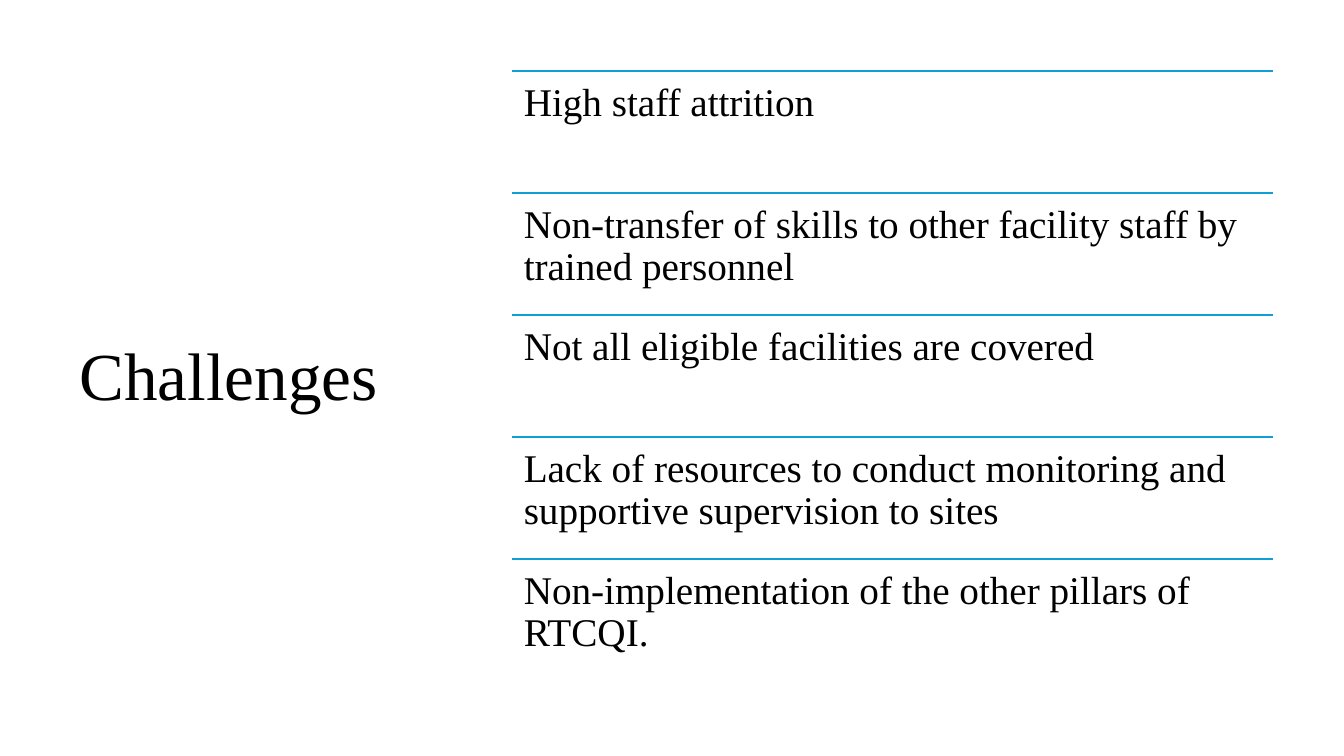
import pptx
import pptx.dml.color
import pptx.enum.shapes
import pptx.enum.text
import pptx.oxml.ns
import pptx.util
from pptx.util import Cm
from lxml import etree

BLACK = pptx.dml.color.RGBColor(0x00, 0x00, 0x00)
BLUE = pptx.dml.color.RGBColor(0x0F, 0x9E, 0xD5)
FONT = "Times New Roman"

CHALLENGES = [
    "High staff attrition",
    "Non-transfer of skills to other facility staff by trained personnel",
    "Not all eligible facilities are covered",
    "Lack of resources to conduct monitoring and supportive supervision to sites",
    "Non-implementation of the other pillars of RTCQI.",
]


def write_text(shape, text, size, anchor, inset=None):
    """Fill a shape with one formatted, left-aligned paragraph."""
    frame = shape.text_frame
    frame.word_wrap = True
    frame.auto_size = pptx.enum.text.MSO_AUTO_SIZE.NONE
    frame.vertical_anchor = anchor
    if inset is not None:
        frame.margin_left = frame.margin_right = inset
        frame.margin_top = frame.margin_bottom = inset
    para = frame.paragraphs[0]
    para.alignment = pptx.enum.text.PP_ALIGN.LEFT
    para.line_spacing = 0.9
    span = para.add_run()
    span.text = text
    span.font.name = FONT
    span.font.size = pptx.util.Pt(size)
    span.font.color.rgb = BLACK


def add_rule(slide, left, top, width):
    """Draw a horizontal blue line without a shadow."""
    rule = slide.shapes.add_connector(
        pptx.enum.shapes.MSO_CONNECTOR.STRAIGHT, left, top, left + width, top)
    rule.line.color.rgb = BLUE
    rule.line.width = pptx.util.Pt(1.5)
    etree.SubElement(rule._element.spPr, pptx.oxml.ns.qn("a:effectLst"))


def place_title(slide, left, top, width, height):
    title = slide.shapes.title
    title.left, title.top, title.width, title.height = left, top, width, height
    write_text(title, "Challenges", 48, pptx.enum.text.MSO_ANCHOR.MIDDLE)


def place_challenges(slide, left, top, width, height):
    """Split the box into equal rows, each a line with text below it."""
    row_height = height // len(CHALLENGES)
    for index, challenge in enumerate(CHALLENGES):
        row_top = top + index * row_height
        add_rule(slide, left, row_top, width)
        box = slide.shapes.add_textbox(left, row_top, width, row_height)
        write_text(box, challenge, 28, pptx.enum.text.MSO_ANCHOR.TOP, Cm(0.3))


def main():
    deck = pptx.Presentation()
    deck.slide_width, deck.slide_height = Cm(33.87), Cm(19.05)
    # Title-only page
    page = deck.slides.add_slide(deck.slide_layouts[5])
    # Heading on the left, list on the right
    place_title(page, Cm(1.75), Cm(1.78), Cm(9.5), Cm(15.52))
    place_challenges(page, Cm(12.9), Cm(1.78), Cm(19.18), Cm(15.37))
    deck.save("out.pptx")


if __name__ == "__main__":
    main()
